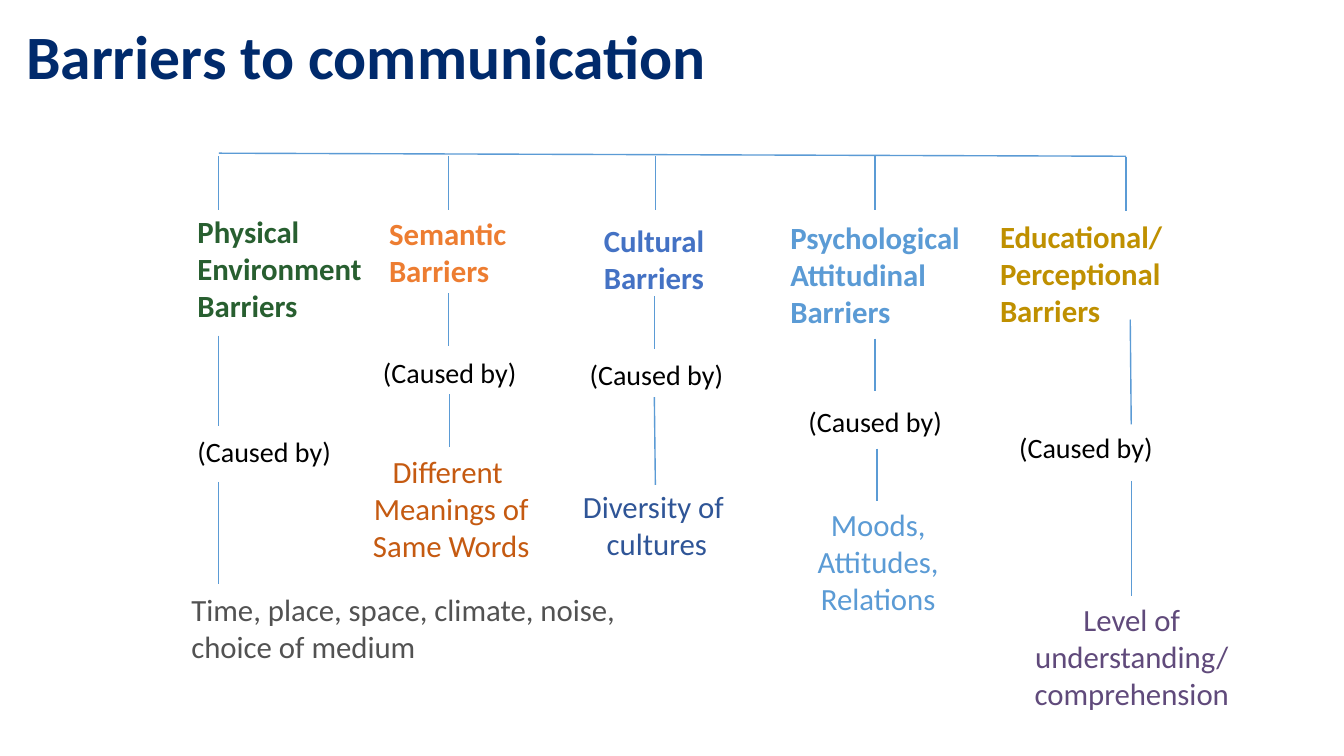
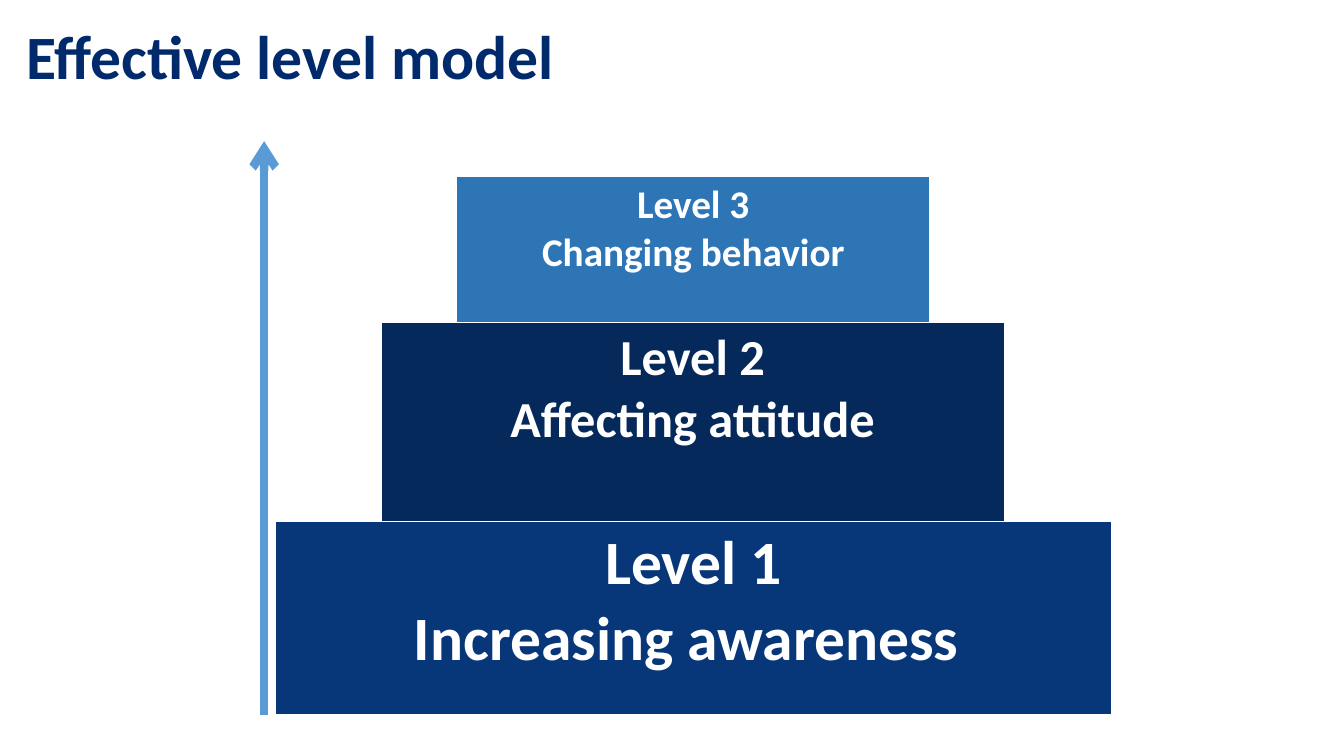
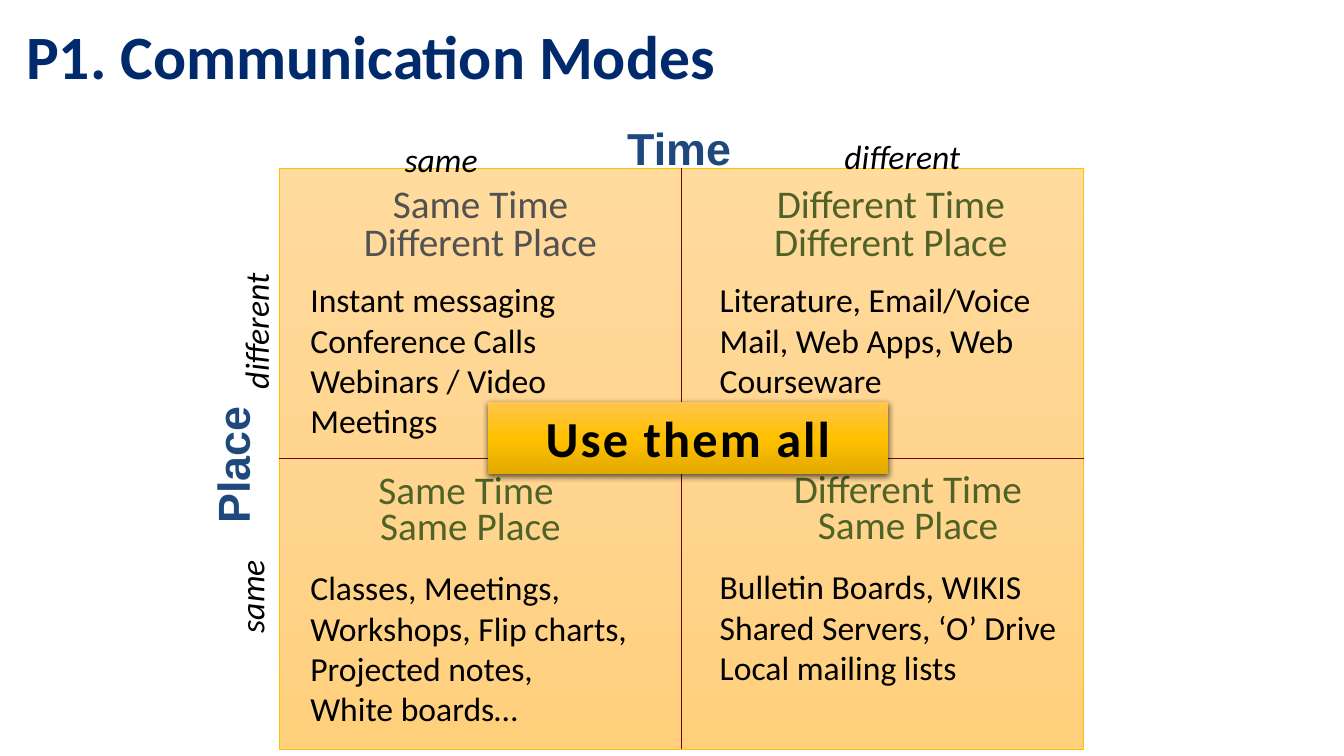
import copy
from dataclasses import dataclass, field, replace
from typing import NamedTuple, Optional

import pptx
import pptx.dml.color
import pptx.enum.shapes
import pptx.enum.text
import pptx.oxml
import pptx.oxml.ns
import pptx.util

Inches = pptx.util.Inches
Pt = pptx.util.Pt
qn = pptx.oxml.ns.qn
LEFT = pptx.enum.text.PP_ALIGN.LEFT
CENTER = pptx.enum.text.PP_ALIGN.CENTER
MIDDLE = pptx.enum.text.MSO_ANCHOR.MIDDLE
TOP = pptx.enum.text.MSO_ANCHOR.TOP


class Box(NamedTuple):
    left: float
    top: float
    width: float
    height: float

    def lengths(self) -> tuple:
        return tuple(Inches(value) for value in self)


class Line(NamedTuple):
    x1: float
    y1: float
    x2: float
    y2: float


@dataclass(frozen=True)
class TextStyle:
    size: float
    colour: str
    bold: bool = False
    italic: bool = False
    font: str = "Calibri"
    align: int = LEFT
    spacing: Optional[float] = None
    tracking: float = 0


@dataclass(frozen=True)
class Theme:
    navy: str = "002A6C"
    sky: str = "5B9BD5"
    white: str = "FFFFFF"
    black: str = "000000"
    gold: str = "FFC000"
    maroon: str = "800000"
    grey: str = "525252"
    olive: str = "4F6228"
    axis: str = "1F497D"
    levels: tuple = ("2E75B6", "05295B", "073779")
    grid_gradient: tuple = ("FFDB9E", "FFD590", "FFD07C")
    banner_gradient: tuple = ("FFC64B", "FFC000", "E3AB00")
    title_size: float = 44
    level_sizes: tuple = (28, 36, 44)
    barrier_size: float = 22
    caused_size: float = 20
    axis_size: float = 32
    heading_size: float = 28
    body_size: float = 24
    banner_size: float = 36


THEME = Theme()
TITLE_BOX = Box(0.16, 0, 12.99, 1.18)
TITLE = TextStyle(THEME.title_size, THEME.navy, bold=True, spacing=0.9)
CAUSED = TextStyle(THEME.caused_size, THEME.black)
AXIS = TextStyle(THEME.axis_size, THEME.axis, bold=True, font="Arial", align=CENTER)
AXIS_VALUE = TextStyle(THEME.body_size, THEME.black, italic=True, align=CENTER)
BODY = TextStyle(THEME.body_size, THEME.black)
BANNER = TextStyle(THEME.banner_size, THEME.black, bold=True, align=CENTER, tracking=1.5)


@dataclass(frozen=True)
class Label:
    text: str
    box: Box
    style: TextStyle
    wrap: bool = True
    rotation: float = 0


@dataclass(frozen=True)
class Barrier:
    name: Label
    caused_at: tuple
    cause: Label
    stems: list = field(default_factory=list)


def rgb(code: str) -> pptx.dml.color.RGBColor:
    return pptx.dml.color.RGBColor.from_string(code)


def write(frame, text: str, style: TextStyle) -> None:
    frame.text = text
    for paragraph in frame.paragraphs:
        paragraph.alignment = style.align
        if style.spacing:
            paragraph.line_spacing = style.spacing
        for run in paragraph.runs:
            font = run.font
            font.name, font.size = style.font, Pt(style.size)
            font.bold, font.italic = style.bold, style.italic
            font.color.rgb = rgb(style.colour)
            if style.tracking:
                font._element.set("spc", str(round(style.tracking * 100)))


def add_titled_slide(deck, title: str):
    slide = deck.slides.add_slide(deck.slide_layouts[5])
    heading = slide.shapes.title
    heading.left, heading.top, heading.width, heading.height = TITLE_BOX.lengths()
    write(heading.text_frame, title, TITLE)
    heading.text_frame.auto_size = pptx.enum.text.MSO_AUTO_SIZE.NONE
    heading.text_frame.vertical_anchor = MIDDLE
    return slide


def add_label(slide, label: Label) -> None:
    holder = slide.shapes.add_textbox(*label.box.lengths())
    holder.rotation = label.rotation
    holder.text_frame.word_wrap = label.wrap
    write(holder.text_frame, label.text, label.style)


def add_line(slide, line: Line, colour: str, width: float, arrow: bool = False) -> None:
    connector = slide.shapes.add_connector(
        pptx.enum.shapes.MSO_CONNECTOR.STRAIGHT, *(Inches(value) for value in line))
    connector.line.color.rgb = rgb(colour)
    connector.line.width = Pt(width)
    if arrow:
        stroke = connector.line._get_or_add_ln()
        stroke.append(pptx.oxml.parse_xml(
            f'<a:tailEnd {pptx.oxml.ns.nsdecls("a")} type="arrow"/>'))
    connector._element.spPr.append(pptx.oxml.parse_xml(
        f'<a:effectLst {pptx.oxml.ns.nsdecls("a")}/>'))


def add_gradient_panel(slide, box: Box, colours: tuple):
    panel = slide.shapes.add_shape(
        pptx.enum.shapes.MSO_SHAPE.RECTANGLE, *box.lengths())
    panel.shadow.inherit = False
    panel.fill.gradient()
    panel.fill.gradient_angle = 270
    stops = panel._element.spPr.find(f".//{qn('a:gsLst')}")
    stops.insert(1, copy.deepcopy(stops[0]))
    for index, (stop, colour) in enumerate(zip(panel.fill.gradient_stops, colours)):
        stop.color.rgb = rgb(colour)
        stop.position = index / (len(colours) - 1)
    return panel


def barrier(name: str, name_box: Box, name_colour: str, caused_at: tuple,
            cause: str, cause_box: Box, cause_colour: str, *stems: Line,
            align: int = CENTER, wrap: bool = False) -> Barrier:
    name_style = TextStyle(THEME.barrier_size, name_colour, bold=True)
    cause_style = TextStyle(THEME.barrier_size, cause_colour, align=align)
    return Barrier(Label(name, name_box, name_style, wrap=False), caused_at,
                   Label(cause, cause_box, cause_style, wrap=wrap), list(stems))


BARRIERS = [
    barrier("Physical\nEnvironment\nBarriers", Box(1.86, 2.06, 1.87, 1.21), "285F30",
            (1.86, 4.26),
            "Time, place, space, climate, noise,\nchoice of medium",
            Box(1.8, 5.81, 4.54, 0.84), THEME.grey,
            Line(2.17, 1.55, 2.17, 2.08), Line(2.17, 3.33, 2.17, 4.23),
            Line(2.17, 4.78, 2.17, 5.79), align=LEFT, wrap=True),
    barrier("Semantic\nBarriers", Box(3.76, 2.08, 1.38, 0.84), "ED7D31",
            (3.7, 3.48),
            "Different \nMeanings of\nSame Words", Box(3.59, 4.44, 1.77, 1.21), "C55A11",
            Line(4.45, 1.55, 4.45, 2.08), Line(4.45, 2.91, 4.45, 3.43),
            Line(4.46, 3.91, 4.46, 4.43)),
    barrier("Cultural\nBarriers", Box(5.89, 2.15, 1.28, 0.84), "4472C4",
            (5.75, 3.5),
            "Diversity of \ncultures", Box(5.67, 4.79, 1.69, 0.84), "2F5597",
            Line(6.5, 1.55, 6.5, 2.08), Line(6.49, 2.94, 6.49, 3.46),
            Line(6.49, 3.94, 6.5, 4.81)),
    barrier("Psychological\nAttitudinal\nBarriers", Box(7.74, 2.12, 1.92, 1.21), THEME.sky,
            (7.92, 3.96),
            "Moods,\nAttitudes,\nRelations", Box(8, 4.97, 1.42, 1.21), THEME.sky,
            Line(8.68, 1.55, 8.68, 2.08), Line(8.68, 3.36, 8.68, 3.88),
            Line(8.7, 4.45, 8.7, 4.97)),
    barrier("Educational/\nPerceptional\nBarriers", Box(9.82, 2.11, 1.84, 1.21), "BF9000",
            (10.01, 4.22),
            "Level of understanding/ comprehension", Box(10.15, 5.91, 2.15, 1.21), "604A7B",
            Line(11.17, 1.56, 11.17, 2.09), Line(11.21, 3.17, 11.22, 4.21),
            Line(11.22, 4.77, 11.22, 5.91), wrap=True),
]


def build_barriers(deck) -> None:
    slide = add_titled_slide(deck, "Barriers to communication")
    add_line(slide, Line(2.17, 1.52, 11.17, 1.55), THEME.sky, 1)
    for item in BARRIERS:
        for stem in item.stems:
            add_line(slide, stem, THEME.sky, 1)
        add_label(slide, item.name)
        add_label(slide, Label("(Caused by)", Box(*item.caused_at, 1.54, 0.44),
                               CAUSED, wrap=False))
        add_label(slide, item.cause)


def build_levels(deck) -> None:
    slide = add_titled_slide(deck, "Effective level model")
    widths = (1.05, 0.75, 4.69, 0.74, 1.07)
    heights = (1.45, 1.97, 1.92)
    texts = ("Level 3\nChanging behavior", "Level 2\nAffecting attitude",
             "Level 1\nIncreasing awareness ")
    pyramid = slide.shapes.add_table(
        len(heights), len(widths),
        *Box(2.73, 1.75, sum(widths), sum(heights)).lengths()).table
    pyramid.horz_banding = False
    for column, width in zip(pyramid.columns, widths):
        column.width = Inches(width)
    for row, height in zip(pyramid.rows, heights):
        row.height = Inches(height)
        for cell in row.cells:
            cell.fill.solid()
            cell.fill.fore_color.rgb = rgb(THEME.white)
    steps = zip(texts, THEME.levels, THEME.level_sizes)
    for row, (text, colour, size) in enumerate(steps):
        first, last = 2 - row, 2 + row
        step = pyramid.cell(row, first)
        if first < last:
            step.merge(pyramid.cell(row, last))
        step.fill.fore_color.rgb = rgb(colour)
        write(step.text_frame, text,
              TextStyle(size, THEME.white, bold=True, align=CENTER))
    add_line(slide, Line(2.62, 7.09, 2.62, 1.4), THEME.sky, 6, arrow=True)


def heading(colour: str, spacing: float) -> TextStyle:
    return TextStyle(THEME.heading_size, colour, align=CENTER, spacing=spacing)


MODE_LABELS = [
    Label("Time", Box(6.04, 1.15, 1.39, 0.74), AXIS),
    Label("Place", Box(1.45, 4.23, 1.84, 0.77), AXIS, rotation=270),
    Label("Same Time\nDifferent Place", Box(3.19, 1.82, 3.15, 1.05),
          heading(THEME.grey, 0.8)),
    Label("Different Time Different Place", Box(7.26, 1.82, 3.15, 1),
          heading(THEME.olive, 0.8)),
    Label("Same Time \vSame Place", Box(3.09, 4.68, 3.15, 0.91),
          heading(THEME.olive, 0.75)),
    Label("Different Time Same Place", Box(7.43, 4.67, 3.15, 0.91),
          heading(THEME.olive, 0.75)),
    Label("different", Box(8.15, 1.3, 1.6, 0.39), AXIS_VALUE),
    Label("different", Box(1.79, 3.03, 1.5, 0.51), AXIS_VALUE, rotation=270),
    Label("same", Box(3.68, 1.33, 1.39, 0.34), AXIS_VALUE),
    Label("same", Box(1.89, 5.5, 1.23, 0.53), replace(AXIS_VALUE, align=LEFT),
          rotation=270),
    Label("Instant messaging\nConference Calls\nWebinars / Video Meetings",
          Box(2.98, 2.72, 3.83, 1.2), BODY),
    Label("Classes, Meetings, Workshops, Flip charts, Projected notes,\nWhite boards…",
          Box(2.98, 5.58, 3.8, 1.26), BODY),
    Label("Literature, Email/Voice Mail, Web Apps, Web Courseware",
          Box(7.04, 2.72, 3.7, 1.41), BODY),
    Label("Bulletin Boards, WIKIS\nShared Servers, ‘O’ Drive\nLocal mailing lists",
          Box(7.04, 5.57, 3.7, 1.56), BODY),
]


def build_modes(deck) -> None:
    slide = add_titled_slide(deck, "P1. Communication Modes")
    grid = Box(2.77, 1.67, 7.98, 5.76)
    quadrants = add_gradient_panel(slide, grid, THEME.grid_gradient)
    quadrants.line.color.rgb = rgb(THEME.gold)
    quadrants.line.width = Pt(0.5)
    right, bottom = grid.left + grid.width, grid.top + grid.height
    middle_x, middle_y = grid.left + grid.width / 2, grid.top + grid.height / 2
    add_line(slide, Line(middle_x, grid.top, middle_x, bottom), THEME.maroon, 0.75)
    add_line(slide, Line(grid.left, middle_y, right, middle_y), THEME.maroon, 0.75)
    for label in MODE_LABELS:
        add_label(slide, label)
    banner = add_gradient_panel(slide, Box(4.84, 3.99, 3.97, 0.71), THEME.banner_gradient)
    banner.line.fill.background()
    banner.text_frame.word_wrap = True
    banner.text_frame.vertical_anchor = TOP
    write(banner.text_frame, "Use them all", BANNER)
    banner._element.spPr.find(qn("a:effectLst")).append(pptx.oxml.parse_xml(
        f'<a:outerShdw {pptx.oxml.ns.nsdecls("a")} blurRad="{Pt(4.5)}" '
        f'dist="{Pt(1.5)}" dir="5400000" rotWithShape="0">'
        f'<a:srgbClr val="{THEME.black}"><a:alpha val="63000"/></a:srgbClr>'
        '</a:outerShdw>'))


def main() -> None:
    deck = pptx.Presentation()
    deck.slide_width, deck.slide_height = Inches(13.33), Inches(7.5)
    for build in (build_barriers, build_levels, build_modes):
        build(deck)
    deck.save("out.pptx")


if __name__ == "__main__":
    main()
